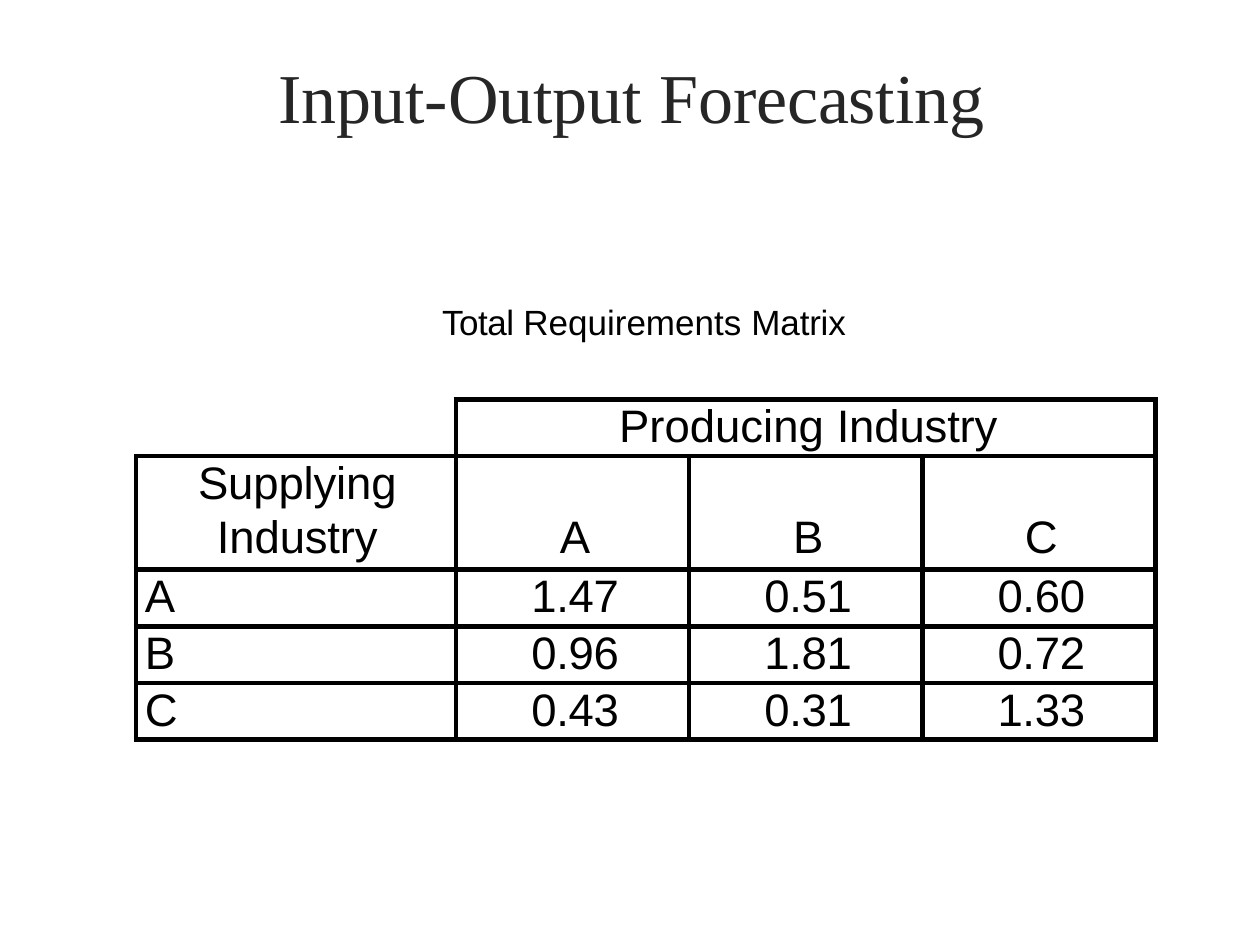
"""Build the input-output forecasting slide with its total requirements matrix."""
from dataclasses import dataclass

from lxml import etree
from pptx import Presentation
from pptx import util as u
from pptx.dml.color import RGBColor
from pptx.enum import text
from pptx.oxml.ns import qn

WIDTH, HEIGHT = u.Inches(10), u.Inches(7.5)
INK, TITLE_INK = "000000", "262626"
SANS, SERIF = "Arial", "Times New Roman"
CENTER, LEFT = text.PP_ALIGN.CENTER, text.PP_ALIGN.LEFT
TOP, MIDDLE, BOTTOM = text.MSO_ANCHOR.TOP, text.MSO_ANCHOR.MIDDLE, text.MSO_ANCHOR.BOTTOM
COLUMN_SHARES = (0.254, 0.185, 0.185, 0.185)
ROW_SHARES = (0.06, 0.12, 0.06, 0.06, 0.06)
INDUSTRIES = ("A", "B", "C")
REQUIREMENTS = (("1.47", "0.51", "0.60"), ("0.96", "1.81", "0.72"), ("0.43", "0.31", "1.33"))


@dataclass(frozen=True)
class Span:
    """A run of text and its letter spacing in points."""
    words: str
    spacing: float = 0


@dataclass(frozen=True)
class Style:
    """The look of a paragraph; indent is in inches, line in points."""
    size: float
    font: str = SANS
    color: str = INK
    align: text.PP_ALIGN = CENTER
    indent: float = 0.01
    line: float | None = None


TITLE = Style(40, SERIF, TITLE_INK)
CAPTION = Style(20, align=LEFT)
NUMBER = Style(26, indent=0.04, line=30.2)
HEADING = Style(26, indent=0.04)
STUB = Style(26, align=LEFT, indent=0.07, line=30.2)


def paint(hex_color: str) -> RGBColor:
    """Turn a hex string into a colour."""
    return RGBColor.from_string(hex_color)


def write(para, spans: tuple[Span, ...], style: Style) -> None:
    """Fill a paragraph run by run."""
    para.alignment = style.align
    properties = para._p.get_or_add_pPr()
    properties.set("marL", str(u.Inches(style.indent)))
    properties.set("indent", "0")
    if style.line:
        para.line_spacing = u.Pt(style.line)
    for part in spans:
        span = para.add_run()
        span.text = part.words
        span.font.size, span.font.name = u.Pt(style.size), style.font
        span.font.color.rgb = paint(style.color)
        span._r.get_or_add_rPr().set("spc", str(round(part.spacing * 100)))


def place(box, left: float, top: float, width: float, height: float) -> None:
    """Position a box by shares of the slide size and trim its insets."""
    box.left, box.top = round(WIDTH * left), round(HEIGHT * top)
    box.width, box.height = round(WIDTH * width), round(HEIGHT * height)
    frame = box.text_frame
    frame.word_wrap, frame.auto_size = True, text.MSO_AUTO_SIZE.NONE
    frame.margin_left = frame.margin_right = frame.margin_bottom = 0
    frame.margin_top = u.Inches(0.02)


def border(cell, sides: str) -> None:
    """Rule the named sides of a cell and clear the others."""
    properties = cell._tc.get_or_add_tcPr()
    for side in "LRTB":
        line = etree.SubElement(properties, qn(f"a:ln{side}"), w=str(u.Pt(3)))
        if side in sides:
            fill = etree.SubElement(line, qn("a:solidFill"))
            etree.SubElement(fill, qn("a:srgbClr"), val=INK)
        else:
            etree.SubElement(line, qn("a:noFill"))


def fill_cell(cell, lines: tuple[tuple[Span, ...], ...], style: Style,
              anchor=TOP, bottom: float = 0) -> None:
    """Write one paragraph per line into a cell."""
    cell.vertical_anchor, cell.margin_bottom = anchor, u.Inches(bottom)
    for index, spans in enumerate(lines):
        para = cell.text_frame.add_paragraph() if index else cell.text_frame.paragraphs[0]
        write(para, spans, style)


def add_matrix(page) -> None:
    """Draw the requirements matrix."""
    frame = page.shapes.add_table(
        len(ROW_SHARES), len(COLUMN_SHARES), round(WIDTH * 0.108), round(HEIGHT * 0.4227),
        round(WIDTH * sum(COLUMN_SHARES)), round(HEIGHT * sum(ROW_SHARES)))
    table = frame.table
    table.first_row = table.horz_banding = False
    for column, share in zip(table.columns, COLUMN_SHARES):
        column.width = round(WIDTH * share)
    for row, share in zip(table.rows, ROW_SHARES):
        row.height = round(HEIGHT * share)
    corner = table.cell(0, 0)
    for cell in table.iter_cells():
        cell.margin_left = cell.margin_right = cell.margin_top = cell.margin_bottom = 0
        border(cell, "RB" if cell == corner else "LRTB")
        cell.fill.background()
    table.cell(0, 1).merge(table.cell(0, 3))
    fill_cell(table.cell(0, 1), ((Span("Producing"), Span(" Industry", -0.1)),), NUMBER)
    fill_cell(table.cell(1, 0), ((Span("Supplying", -0.1),), (Span("Industry", -0.1),)),
              Style(26, indent=0.02, line=30.5))
    for index, (industry, values) in enumerate(zip(INDUSTRIES, REQUIREMENTS), 1):
        name = ((Span(industry, -0.5),),)
        fill_cell(table.cell(1, index), name, HEADING, BOTTOM, 0.05)
        fill_cell(table.cell(index + 1, 0), name, STUB)
        for column, value in enumerate(values, 1):
            fill_cell(table.cell(index + 1, column), ((Span(value, -0.2),),), NUMBER)


def main() -> None:
    """Assemble and save the deck."""
    deck = Presentation()
    deck.slide_width, deck.slide_height = WIDTH, HEIGHT
    page = deck.slides.add_slide(deck.slide_layouts[5])
    title = page.shapes.title
    place(title, 0.15, 0.044, 0.701, 0.111)
    title.text_frame.vertical_anchor = MIDDLE
    write(title.text_frame.paragraphs[0],
          (Span("Input-", -0.1), Span("Output "), Span("Forecasting", -0.1)), TITLE)
    caption = page.shapes.add_textbox(0, 0, 0, 0)
    place(caption, 0.35, 0.315, 0.325, 0.048)
    write(caption.text_frame.paragraphs[0],
          (Span("Total ", -0.3), Span("Requirements "), Span("Matrix", -0.1)), CAPTION)
    add_matrix(page)
    deck.save("out.pptx")


if __name__ == "__main__":
    main()
